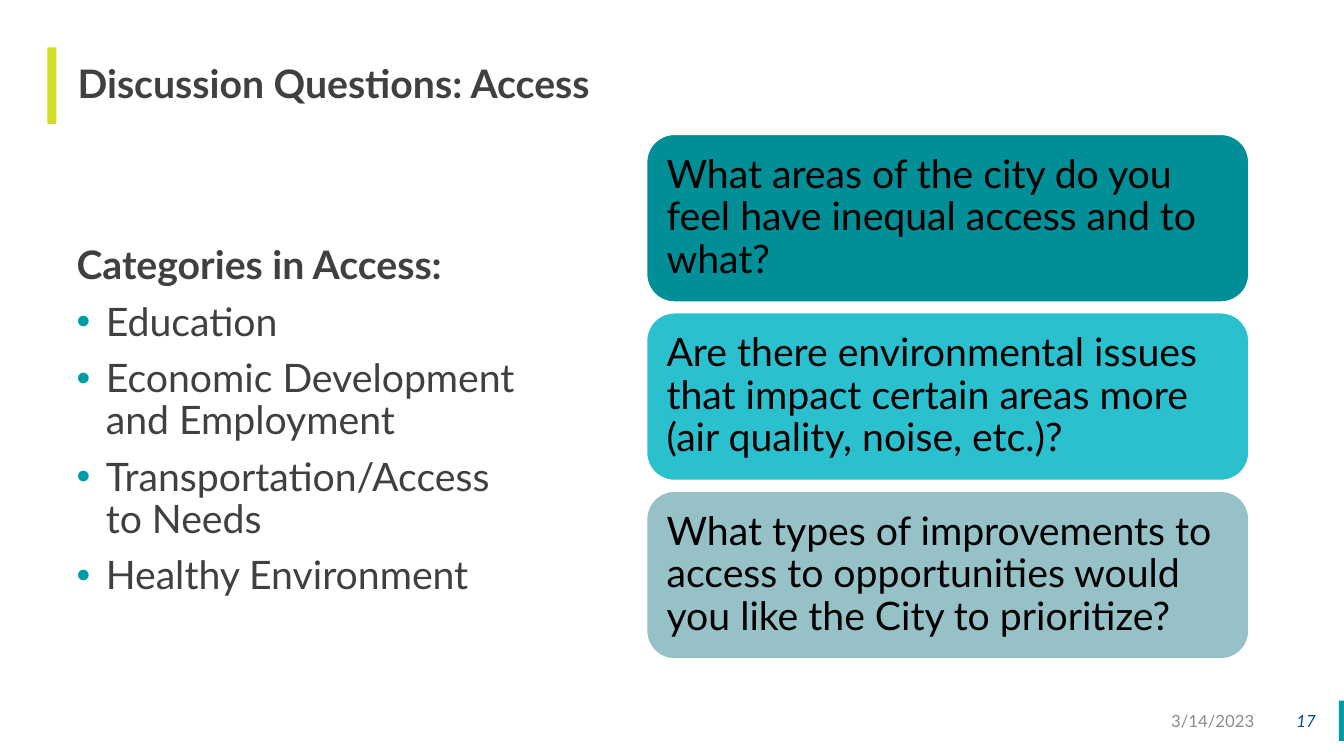
from dataclasses import dataclass

from lxml import etree
from pptx import Presentation
from pptx.dml.color import RGBColor
from pptx.enum.shapes import MSO_SHAPE
from pptx.enum.text import MSO_ANCHOR, PP_ALIGN
from pptx.oxml.ns import qn
from pptx.util import Inches, Pt

RECT = MSO_SHAPE.RECTANGLE
ROUNDED = MSO_SHAPE.ROUNDED_RECTANGLE
TOP, MIDDLE = MSO_ANCHOR.TOP, MSO_ANCHOR.MIDDLE
LEFT, RIGHT = PP_ALIGN.LEFT, PP_ALIGN.RIGHT


@dataclass(frozen=True)
class Theme:
    font: str = "Lato"
    main_size: int = 28
    footer_size: int = 12
    text: str = "404040"
    card_text: str = "000000"
    date: str = "8C8C8C"
    navy: str = "004B87"
    white: str = "FFFFFF"
    teal: str = "009CA6"
    lime: str = "D2DE26"
    cards: tuple = ("008E97", "2BC0CE", "95C1C7")


class SlideBuilder:
    def __init__(self, slide, theme):
        self.slide = slide
        self.theme = theme

    def frame(self, shape, anchor, insets):
        frame = shape.text_frame
        frame.word_wrap = True
        frame.vertical_anchor = anchor
        (frame.margin_left, frame.margin_top,
         frame.margin_right, frame.margin_bottom) = map(Inches, insets)
        return frame

    def add_text(self, paragraph, text, color, size=None, bold=False,
                 italic=False, align=LEFT, spacing=0.9):
        paragraph.alignment = align
        paragraph.line_spacing = spacing
        run = paragraph.add_run()
        run.text = text
        font = run.font
        font.name = self.theme.font
        font.size = Pt(size or self.theme.main_size)
        font.bold, font.italic = bold, italic
        font.color.rgb = RGBColor.from_string(color)

    def block(self, kind, box, fill, outline=None):
        shape = self.slide.shapes.add_shape(kind, *map(Inches, box))
        shape.shadow.inherit = False
        shape.fill.solid()
        shape.fill.fore_color.rgb = RGBColor.from_string(fill)
        if outline:
            shape.line.color.rgb = RGBColor.from_string(outline)
            shape.line.width = Pt(1.5)
        else:
            shape.line.fill.background()
        return shape

    def card(self, box, fill, question):
        card = self.block(ROUNDED, box, fill, self.theme.white)
        frame = self.frame(card, MIDDLE, (0.12,) * 4)
        self.add_text(frame.paragraphs[0], question, self.theme.card_text)

    def label(self, box, text, color, insets=(0.1, 0.05, 0.1, 0.05), **style):
        label = self.slide.shapes.add_textbox(*map(Inches, box))
        frame = self.frame(label, MIDDLE, insets)
        self.add_text(frame.paragraphs[0], text, color, **style)

    def bullet(self, paragraph):
        properties = paragraph._p.get_or_add_pPr()
        properties.set("marL", str(Inches(0.29)))
        properties.set("indent", str(-Inches(0.29)))
        color = etree.SubElement(properties, qn("a:buClr"))
        etree.SubElement(color, qn("a:srgbClr"), val=self.theme.teal)
        etree.SubElement(properties, qn("a:buFont"), typeface="Arial")
        etree.SubElement(properties, qn("a:buChar"), char="•")

    def bullet_list(self, box, heading, items):
        body = self.slide.shapes.add_textbox(*map(Inches, box))
        frame = self.frame(body, TOP, (0,) * 4)
        self.add_text(frame.paragraphs[0], heading, self.theme.text, bold=True)
        for item in items:
            paragraph = frame.add_paragraph()
            self.bullet(paragraph)
            paragraph.space_before = Pt(10)
            self.add_text(paragraph, item, self.theme.text)


def main():
    deck = Presentation()
    deck.slide_width, deck.slide_height = Inches(13.33), Inches(7.5)
    theme = Theme()
    builder = SlideBuilder(deck.slides.add_slide(deck.slide_layouts[6]), theme)

    # Accent bars and title
    builder.block(RECT, (13.28, 6.95, 0.05, 0.4), theme.teal)
    builder.block(RECT, (0.47, 0.47, 0.09, 0.76), theme.lime)
    builder.label((0.57, 0.47, 12.31, 0.76), "Discussion Questions: Access",
                  theme.text, insets=(0.2, 0, 0, 0), bold=True)

    # Categories
    builder.bullet_list((0.76, 2.44, 4.51, 2.78), "Categories in Access:", (
        "Education",
        "Economic Development and Employment",
        "Transportation/Access to Needs",
        "Healthy Environment",
    ))

    # Footer
    builder.label((9.54, 6.95, 3, 0.4), "3/14/2023", theme.date,
                  size=theme.footer_size, align=RIGHT, spacing=1.0)
    builder.label((12.54, 6.95, 0.61, 0.4), "17", theme.navy,
                  size=theme.footer_size, italic=True, align=RIGHT, spacing=1.0)

    # Question cards
    questions = (
        "What areas of the city do you feel have inequal access and to what?",
        "Are there environmental issues that impact certain areas more "
        "(air quality, noise, etc.)?",
        "What types of improvements to access to opportunities would you "
        "like the City to prioritize?",
    )
    first_top, height, gap = 1.33, 1.67, 0.1
    for row, (question, fill) in enumerate(zip(questions, theme.cards)):
        top = first_top + row * (height + gap)
        builder.card((6.41, top, 5.98, height), fill, question)

    deck.save("out.pptx")


if __name__ == "__main__":
    main()
